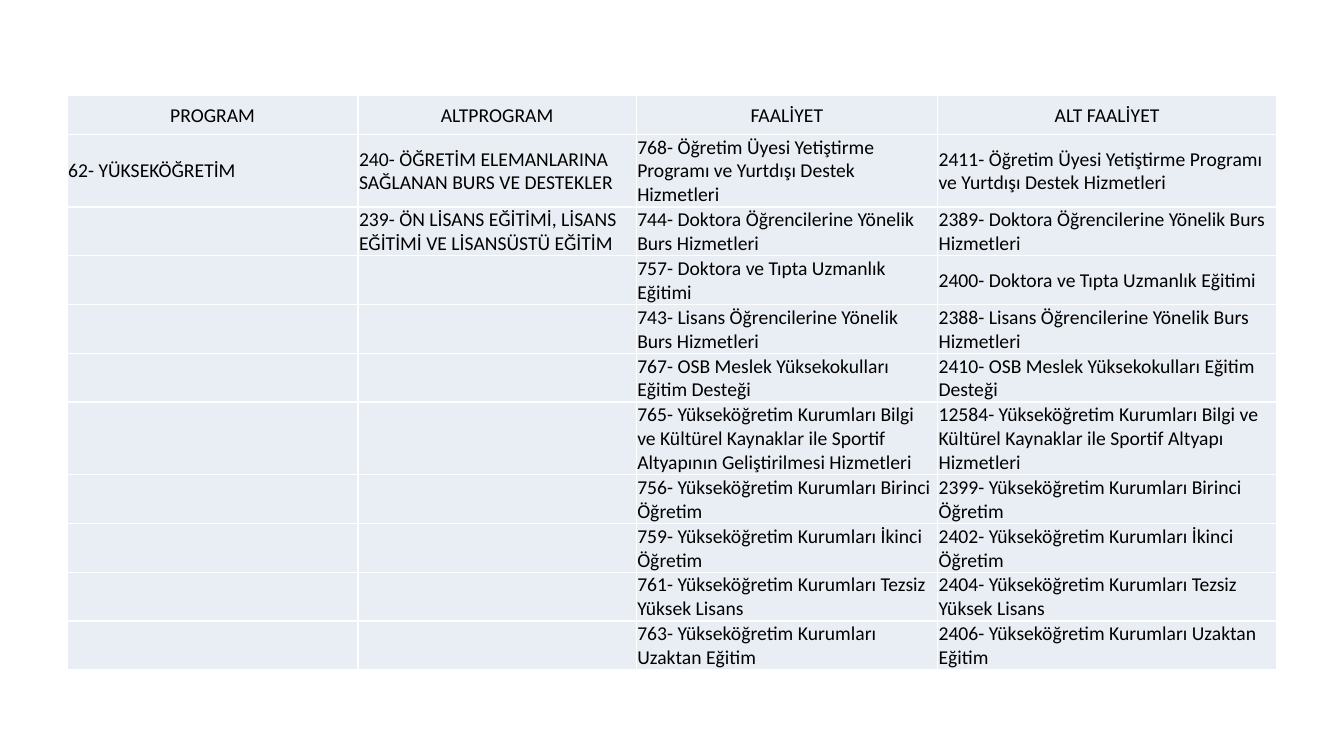
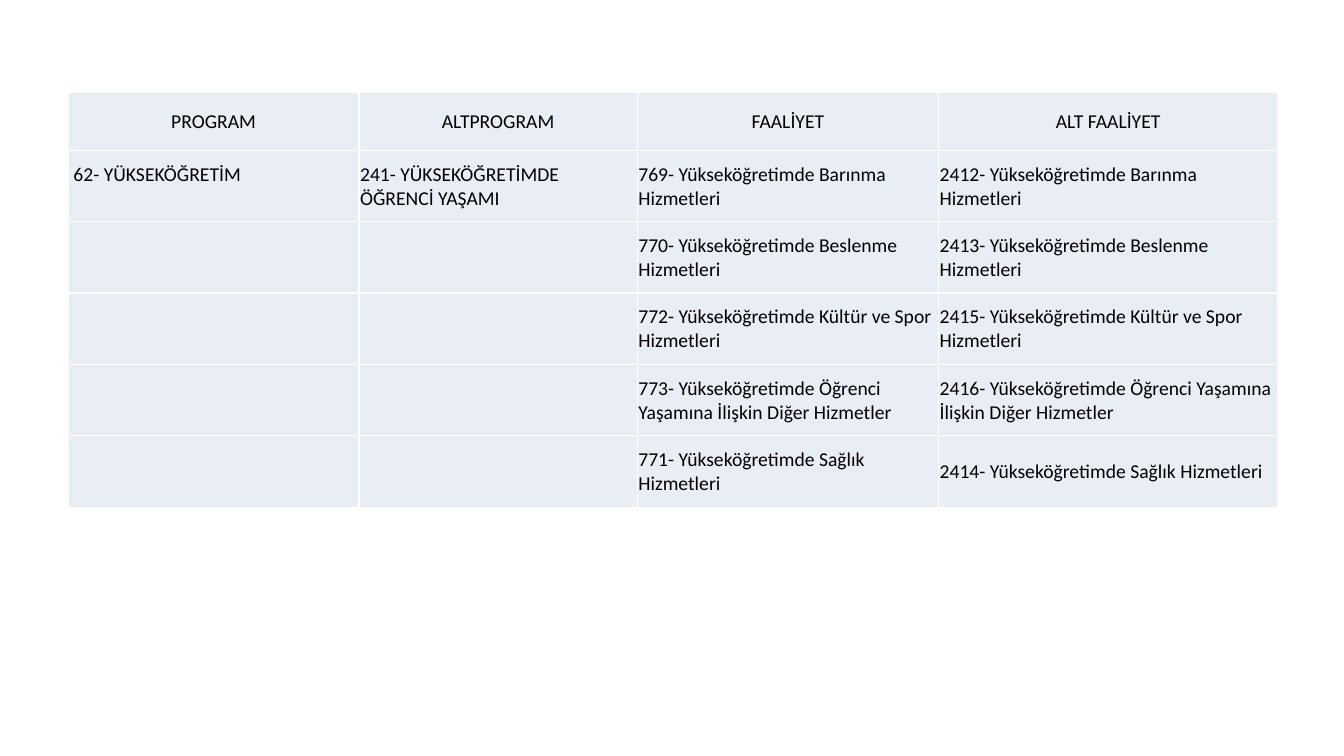
from lxml import etree
from pptx import Presentation
from pptx import util as u
from pptx.dml.color import RGBColor
from pptx.enum import text
from pptx.oxml import ns

# Shared look
PX = 9525
BLANK_LAYOUT = 6
CELL_FILL = RGBColor(0xE9, 0xED, 0xF4)
BORDER = RGBColor(0xFF, 0xFF, 0xFF)
TEXT_COLOR = RGBColor(0x00, 0x00, 0x00)
FONT = {"name": "Calibri", "size": u.Pt(14), "bold": False}
MARGINS = {"margin_left": 1, "margin_right": 1, "margin_top": 1, "margin_bottom": 0}
PLAIN_TABLE = {"first_row": False, "horz_banding": False}
COLUMN_WIDTHS = [277, 265, 287, 323]
HEADERS = ("PROGRAM", "ALTPROGRAM", "FAALİYET", "ALT FAALİYET")

# Table contents
EDUCATION_ROWS = [
    ("62- YÜKSEKÖĞRETİM",
     "240- ÖĞRETİM ELEMANLARINA SAĞLANAN BURS VE DESTEKLER",
     "768- Öğretim Üyesi Yetiştirme Programı ve Yurtdışı Destek Hizmetleri",
     "2411- Öğretim Üyesi Yetiştirme Programı ve Yurtdışı Destek Hizmetleri"),
    ("", "239- ÖN LİSANS EĞİTİMİ, LİSANS EĞİTİMİ VE LİSANSÜSTÜ EĞİTİM",
     "744- Doktora Öğrencilerine Yönelik Burs Hizmetleri",
     "2389- Doktora Öğrencilerine Yönelik Burs Hizmetleri"),
    ("", "", "757- Doktora ve Tıpta Uzmanlık Eğitimi",
     "2400- Doktora ve Tıpta Uzmanlık Eğitimi"),
    ("", "", "743- Lisans Öğrencilerine Yönelik Burs Hizmetleri",
     "2388- Lisans Öğrencilerine Yönelik Burs Hizmetleri"),
    ("", "", "767- OSB Meslek Yüksekokulları Eğitim Desteği",
     "2410- OSB Meslek Yüksekokulları Eğitim Desteği"),
    ("", "",
     "765- Yükseköğretim Kurumları Bilgi ve Kültürel Kaynaklar ile Sportif "
     "Altyapının Geliştirilmesi Hizmetleri",
     "12584- Yükseköğretim Kurumları Bilgi ve Kültürel Kaynaklar ile Sportif "
     "Altyapı Hizmetleri"),
    ("", "", "756- Yükseköğretim Kurumları Birinci Öğretim",
     "2399- Yükseköğretim Kurumları Birinci Öğretim"),
    ("", "", "759- Yükseköğretim Kurumları İkinci Öğretim",
     "2402- Yükseköğretim Kurumları İkinci Öğretim"),
    ("", "", "761- Yükseköğretim Kurumları Tezsiz Yüksek Lisans",
     "2404- Yükseköğretim Kurumları Tezsiz Yüksek Lisans"),
    ("", "", "763- Yükseköğretim Kurumları Uzaktan Eğitim",
     "2406- Yükseköğretim Kurumları Uzaktan Eğitim"),
]
EDUCATION_HEIGHTS = [37, 69] + [46] * 4 + [69] + [46] * 4

STUDENT_LIFE_ROWS = [
    ("62- YÜKSEKÖĞRETİM", "241- YÜKSEKÖĞRETİMDE ÖĞRENCİ YAŞAMI",
     "769- Yükseköğretimde Barınma Hizmetleri",
     "2412- Yükseköğretimde Barınma Hizmetleri"),
    ("", "", "770- Yükseköğretimde Beslenme Hizmetleri",
     "2413- Yükseköğretimde Beslenme Hizmetleri"),
    ("", "", "772- Yükseköğretimde Kültür ve Spor Hizmetleri",
     "2415- Yükseköğretimde Kültür ve Spor Hizmetleri"),
    ("", "", "773- Yükseköğretimde Öğrenci Yaşamına İlişkin Diğer Hizmetler",
     "2416- Yükseköğretimde Öğrenci Yaşamına İlişkin Diğer Hizmetler"),
    ("", "", "771- Yükseköğretimde Sağlık Hizmetleri",
     "2414- Yükseköğretimde Sağlık Hizmetleri"),
]
STUDENT_LIFE_HEIGHTS = [55] + [68] * 5


def set_margins(cell, margins):
    for name, value in margins.items():
        setattr(cell, name, value * PX)


def set_borders(cell):
    properties = cell._tc.get_or_add_tcPr()
    for position, side in enumerate(("lnL", "lnR", "lnT", "lnB")):
        line = etree.Element(ns.qn(f"a:{side}"), w=str(u.Pt(1)))
        fill = etree.SubElement(line, ns.qn("a:solidFill"))
        etree.SubElement(fill, ns.qn("a:srgbClr"), val=str(BORDER))
        properties.insert(position, line)


def format_cell(cell, content, alignment):
    cell.fill.solid()
    cell.fill.fore_color.rgb = CELL_FILL
    set_borders(cell)
    set_margins(cell, MARGINS)
    cell.vertical_anchor = text.MSO_ANCHOR.MIDDLE
    cell.text = content
    paragraph = cell.text_frame.paragraphs[0]
    paragraph.alignment = alignment
    for name, value in FONT.items():
        setattr(paragraph.font, name, value)
    paragraph.font.color.rgb = TEXT_COLOR


def add_program_table(presentation, left, top, rows, heights):
    slide = presentation.slides.add_slide(presentation.slide_layouts[BLANK_LAYOUT])
    frame = slide.shapes.add_table(
        len(heights), len(COLUMN_WIDTHS), left * PX, top * PX,
        sum(COLUMN_WIDTHS) * PX, sum(heights) * PX)
    table = frame.table
    for name, value in PLAIN_TABLE.items():
        setattr(table, name, value)
    for column, width in zip(table.columns, COLUMN_WIDTHS):
        column.width = width * PX
    for index, (row, height, contents) in enumerate(
            zip(table.rows, heights, [HEADERS] + rows)):
        row.height = height * PX
        alignment = text.PP_ALIGN.LEFT if index else text.PP_ALIGN.CENTER
        for cell, content in zip(row.cells, contents):
            format_cell(cell, content, alignment)
    return table


def main():
    presentation = Presentation()
    presentation.slide_width = 1280 * PX
    presentation.slide_height = 720 * PX

    # Education programs
    add_program_table(presentation, 64, 91, EDUCATION_ROWS, EDUCATION_HEIGHTS)

    # Student life; its program name sits slightly indented and raised
    table = add_program_table(
        presentation, 65, 88, STUDENT_LIFE_ROWS, STUDENT_LIFE_HEIGHTS)
    set_margins(table.cell(1, 0), {"margin_left": 5, "margin_bottom": 22})

    presentation.save("out.pptx")


if __name__ == "__main__":
    main()
